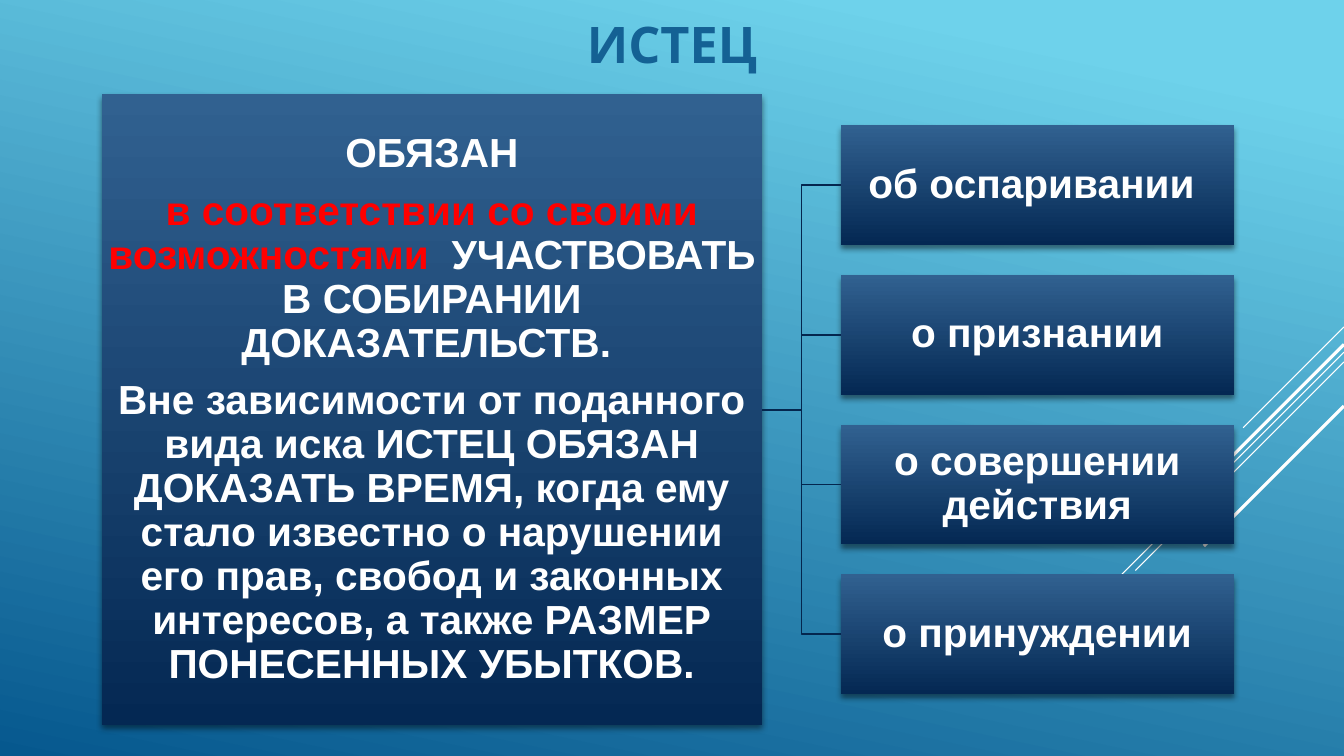
from lxml.etree import SubElement
from pptx import Presentation
from pptx.dml.color import RGBColor
from pptx.enum.shapes import MSO_CONNECTOR, MSO_SHAPE
from pptx.enum.text import MSO_ANCHOR, PP_ALIGN
from pptx.oxml.ns import qn
from pptx.util import Pt

WHITE, RED, TITLE_BLUE, LINE_NAVY = "FFFFFF", "FF0000", "146194", "04264E"
BOX_STOPS = [(0, "316190"), (1, "042853")]
PAGE_STOPS = [(0.1, "6ED2EB"), (1, "06588E")]

DUTY = [
    [("ОБЯЗАН", WHITE)],
    [("в соответствии со своими возможностями  ", RED),
     ("УЧАСТВОВАТЬ В СОБИРАНИИ ДОКАЗАТЕЛЬСТВ. ", WHITE)],
    [("Вне зависимости от поданного вида иска ИСТЕЦ ОБЯЗАН ДОКАЗАТЬ ВРЕМЯ, "
      "когда ему стало известно о нарушении его прав, свобод и законных "
      "интересов, а также РАЗМЕР ПОНЕСЕННЫХ УБЫТКОВ.", WHITE)],
]
CLAIMS = ["об оспаривании ", "о признании", "о совершении действия", "о принуждении"]

# Diagonal rays: height at the right edge, horizontal run, line width
RAYS = [(233.5, 72, 0.75), (251.5, 235, 0.75), (258.5, 149, 0.75),
        (246, 137.5, 2.25), (290, 100, 2.25)]


def colour(code):
    return RGBColor.from_string(code)


def apply(target, values):
    for name, value in values.items():
        setattr(target, name, value)


def fill_gradient(fill, stops, clockwise_angle):
    fill.gradient()
    fill.gradient_angle = 360 - clockwise_angle
    for stop, (position, code) in zip(fill.gradient_stops, stops):
        stop.position = position
        stop.color.rgb = colour(code)


def add_soft_shadow(shape):
    effects = SubElement(shape._element.spPr, qn("a:effectLst"))
    shadow = SubElement(effects, qn("a:outerShdw"), blurRad=str(Pt(4)),
                        dist=str(Pt(3)), dir="5400000", rotWithShape="0")
    black = SubElement(shadow, qn("a:srgbClr"), val="000000")
    SubElement(black, qn("a:alpha"), val="46000")


def write(frame, paragraphs, font, line_spacing=0.9, space_after=10):
    """Fill a frame with centred paragraphs of (text, colour) spans."""
    for index, spans in enumerate(paragraphs):
        para = frame.paragraphs[0] if index == 0 else frame.add_paragraph()
        apply(para, {"alignment": PP_ALIGN.CENTER, "line_spacing": line_spacing,
                     "space_before": Pt(0), "space_after": Pt(space_after)})
        for text, code in spans:
            span = para.add_run()
            span.text = text
            apply(span.font, font)
            span.font.color.rgb = colour(code)


def style_line(connector, code, width):
    connector.line.color.rgb = colour(code)
    connector.line.width = Pt(width)
    SubElement(connector._element.spPr, qn("a:effectLst"))


def add_rays(page, right):
    for top, run, width in RAYS:
        ray = page.shapes.add_connector(
            MSO_CONNECTOR.STRAIGHT, Pt(right), Pt(top), Pt(right - run), Pt(top + run))
        style_line(ray, WHITE, width)


def add_title(page, left, top, width, height):
    title = page.shapes.title
    apply(title, {"left": Pt(left), "top": Pt(top),
                  "width": Pt(width), "height": Pt(height)})
    apply(title.text_frame, {"vertical_anchor": MSO_ANCHOR.MIDDLE, "word_wrap": True})
    write(title.text_frame, [[("ИСТЕЦ", TITLE_BLUE)]],
          {"name": "Quicksand", "size": Pt(36), "bold": True}, 1, 0)


def add_box(page, left, top, width, height, paragraphs):
    box = page.shapes.add_shape(
        MSO_SHAPE.RECTANGLE, Pt(left), Pt(top), Pt(width), Pt(height))
    fill_gradient(box.fill, BOX_STOPS, 90)
    box.line.fill.background()
    add_soft_shadow(box)
    margins = {f"margin_{side}": Pt(1.5) for side in ("left", "top", "right", "bottom")}
    apply(box.text_frame, {"vertical_anchor": MSO_ANCHOR.MIDDLE,
                           "word_wrap": True, **margins})
    write(box.text_frame, paragraphs, {"name": "Arial", "size": Pt(29), "bold": True})
    return box


def add_claims(page, duty_box, left, top, width, height, gap=21.4):
    """Stack the claim boxes evenly and join each one to the duty box."""
    box_height = (height - gap * (len(CLAIMS) - 1)) / len(CLAIMS)
    for index, claim in enumerate(CLAIMS):
        box = add_box(page, left, top + index * (box_height + gap),
                      width, box_height, [[(claim, WHITE)]])
        branch = page.shapes.add_connector(MSO_CONNECTOR.ELBOW, 0, 0, 0, 0)
        branch.begin_connect(duty_box, 3)
        branch.end_connect(box, 1)
        style_line(branch, LINE_NAVY, 1.25)


def main():
    deck = Presentation()
    deck.slide_width, deck.slide_height = Pt(960), Pt(540)
    page = deck.slides.add_slide(deck.slide_layouts[5])
    fill_gradient(page.background.fill, PAGE_STOPS, 102)
    add_rays(page, 960)
    add_title(page, 0, 3.5, 960, 55.5)
    duty_box = add_box(page, 72.8, 67.4, 471.6, 450.4, DUTY)
    add_claims(page, duty_box, 600.6, 89.4, 280.8, 406.5)
    deck.save("out.pptx")


if __name__ == "__main__":
    main()
